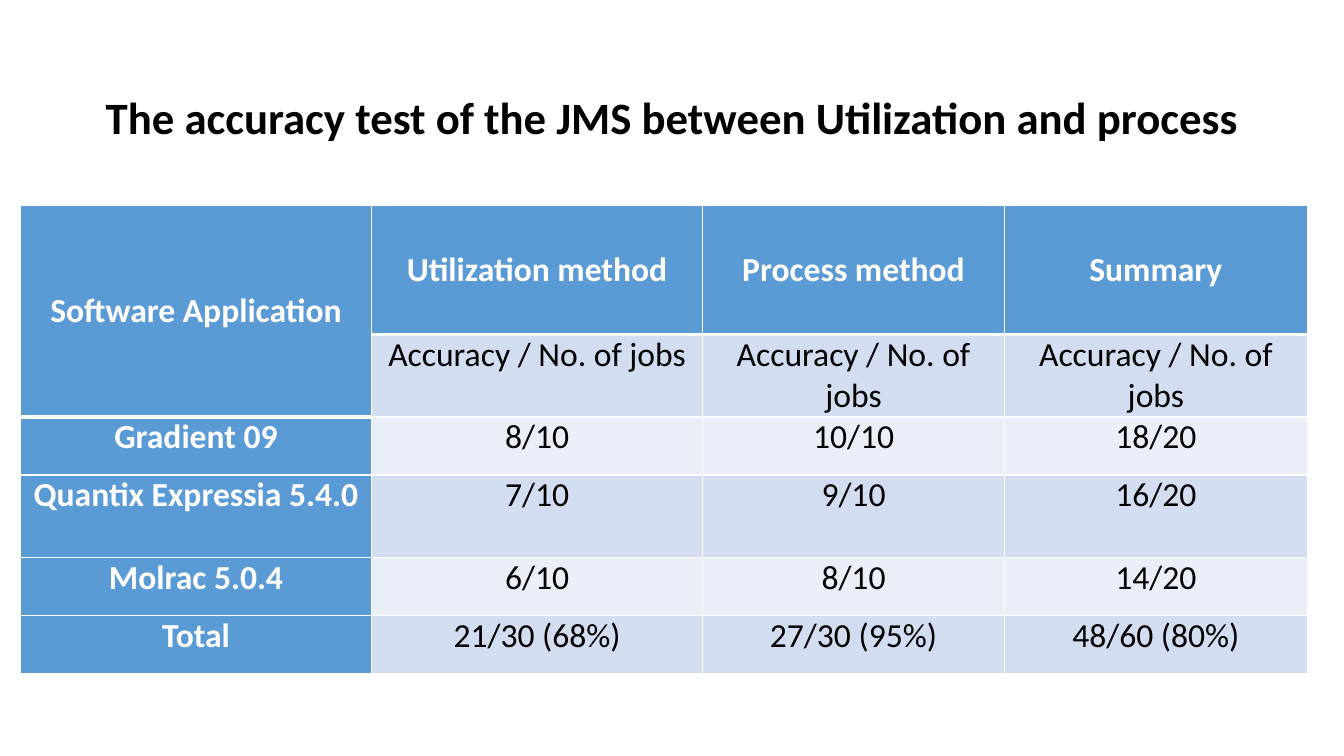
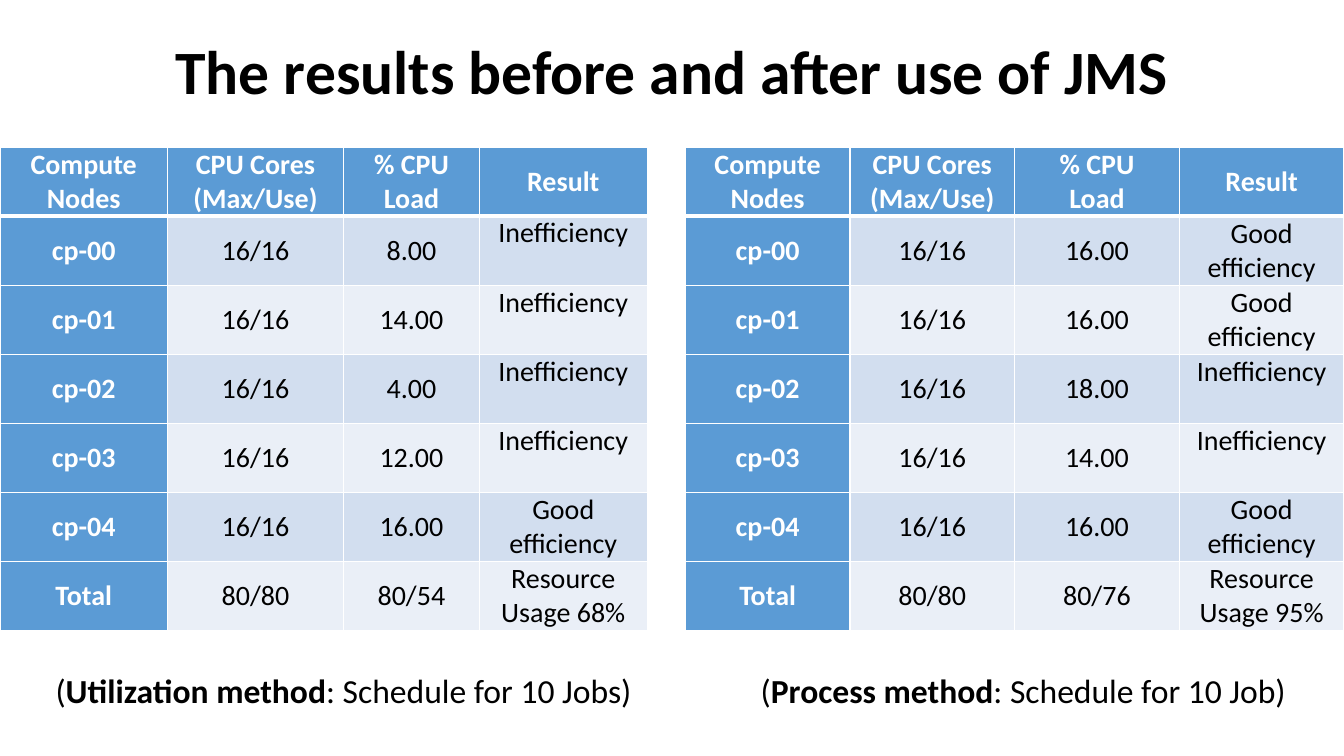
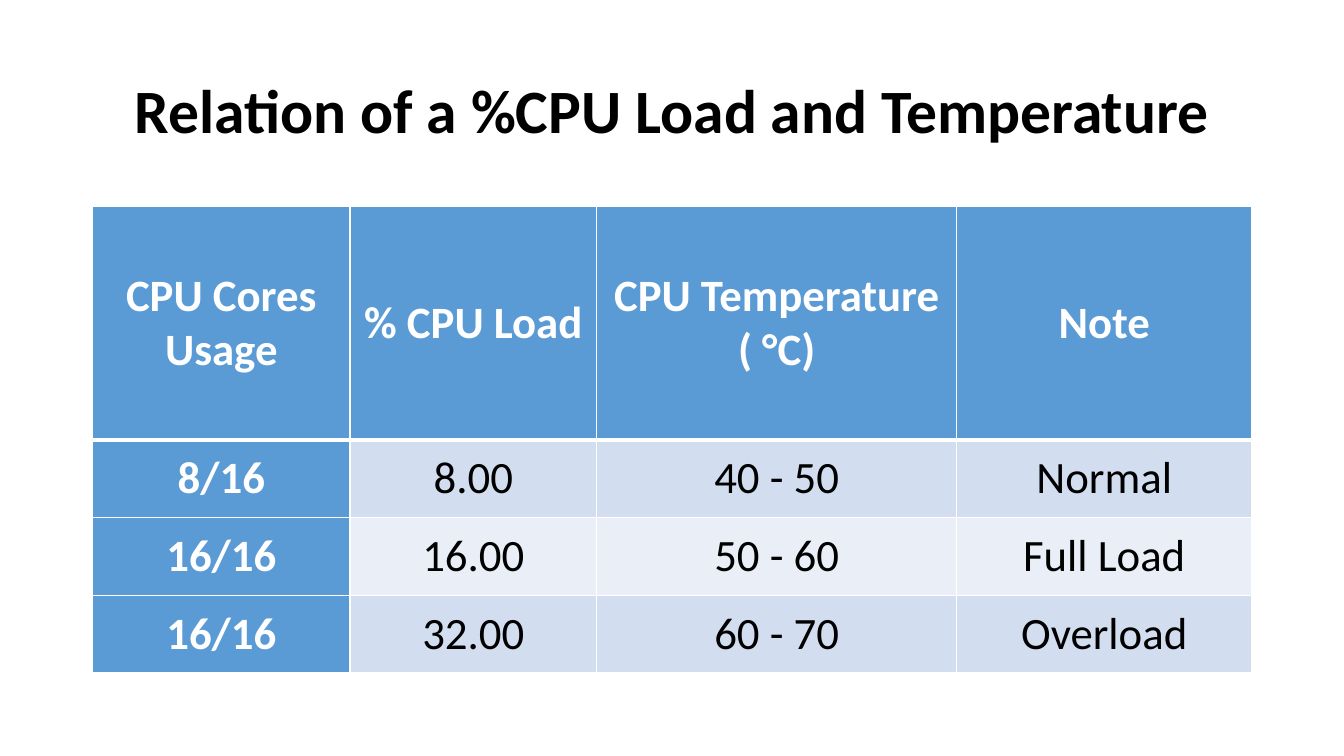
from dataclasses import dataclass

from lxml import etree
from pptx import Presentation
from pptx.dml.color import RGBColor
from pptx.enum.text import MSO_ANCHOR, PP_ALIGN
from pptx.oxml.ns import qn
from pptx.util import Cm, Pt

CENTER, LEFT = PP_ALIGN.CENTER, PP_ALIGN.LEFT
TOP, MIDDLE = MSO_ANCHOR.TOP, MSO_ANCHOR.MIDDLE


@dataclass(frozen=True)
class Theme:
    font: str = "Calibri"
    ink: str = "000000"
    paper: str = "FFFFFF"
    head: str = "5B9BD5"
    bands: tuple = ("D2DEEF", "EAEFF7")
    title: int = 44
    long_title: int = 32
    large: int = 32
    body: int = 24
    small: int = 20
    thin: int = 1
    thick: int = 3
    spacing: float = 0.9
    cell_inset: float = 0.18


T = Theme()


def add_run(p, text, size, color=T.ink, bold=False):
    r = p.add_run()
    r.text = text
    r.font.name = T.font
    r.font.size = Pt(size)
    r.font.bold = bold
    r.font.color.rgb = RGBColor.from_string(color)


def add_text(s, box, runs, size, align):
    tf = s.shapes.add_textbox(*map(Cm, box)).text_frame
    tf.word_wrap = True
    tf.vertical_anchor = MIDDLE
    p = tf.paragraphs[0]
    p.alignment = align
    p.line_spacing = T.spacing
    for text, bold in runs:
        add_run(p, text, size, bold=bold)


def add_title(s, y, text, size=T.title):
    add_text(s, (2.34, y, 29.21, 3.68), [(text, True)], size, CENTER)


def set_borders(cell, top, bottom):
    tc_pr = cell._tc.get_or_add_tcPr()
    for side, width in (("L", T.thin), ("R", T.thin), ("T", top), ("B", bottom)):
        ln = etree.SubElement(tc_pr, qn(f"a:ln{side}"), w=str(Pt(width)))
        fill = etree.SubElement(ln, qn("a:solidFill"))
        etree.SubElement(fill, qn("a:srgbClr"), val=T.paper)


def fill_cell(cell, text, size, fill, heading, anchor):
    cell.fill.solid()
    cell.fill.fore_color.rgb = RGBColor.from_string(fill)
    cell.vertical_anchor = anchor
    cell.margin_left = cell.margin_right = Cm(T.cell_inset)
    cell.margin_top = cell.margin_bottom = 0
    tf = cell.text_frame
    for i, line in enumerate(text.split("\n")):
        p = tf.add_paragraph() if i else tf.paragraphs[0]
        p.alignment = CENTER
        add_run(p, line, size, T.paper if heading else T.ink, heading)


def add_grid(s, x, y, widths, heights, rows, size, anchor_of):
    box = (x, y, sum(widths), sum(heights))
    table = s.shapes.add_table(len(rows), len(widths), *map(Cm, box)).table
    for col, width in zip(table.columns, widths):
        col.width = Cm(width)
    for row, height in zip(table.rows, heights):
        row.height = Cm(height)
    for i, row in enumerate(rows):
        for j, text in enumerate(row):
            cell = table.cell(i, j)
            depth = 2 if rows[1][j] is None else 1
            set_borders(cell,
                        T.thick if i == depth else T.thin,
                        T.thick if i == depth - 1 else T.thin)
            if text is None:
                table.cell(i - 1, j).merge(cell)
                continue
            heading = i == 0 or j == 0
            fill = T.head if heading else T.bands[(i - 1) % 2]
            fill_cell(cell, text, size, fill, heading, anchor_of(i, text))


def accuracy_slide(s):
    add_title(s, 1.19, "The accuracy test of the JMS between Utilization and process",
              T.long_title)
    rows = [
        ("Software Application", "Utilization method", "Process method", "Summary"),
        (None,) + ("Accuracy / No. of jobs",) * 3,
        ("Gradient 09", "8/10", "10/10", "18/20"),
        ("Quantix Expressia 5.4.0", "7/10", "9/10", "16/20"),
        ("Molrac 5.0.4", "6/10", "8/10", "14/20"),
        ("Total", "21/30 (68%)", "27/30 (95%)", "48/60 (80%)"),
    ]
    one_line, two_lines = 1.46, 2.08
    heights = (3.25, two_lines, one_line, two_lines, one_line, one_line)
    add_grid(s, 0.51, 5.18, (8.86, 8.33, 7.62, 7.62), heights, rows, T.body,
             lambda i, text: TOP if i else MIDDLE)


def method_panel(s, x, y, widths, load_label, loads, results, total, usage,
                 caption_indent, method, schedule):
    rows = [("Compute Nodes", "CPU Cores (Max/Use)", load_label, "Result")]
    rows += [(f"cp-{n:02d}", "16/16", load, result)
             for n, (load, result) in enumerate(zip(loads, results))]
    rows.append(("Total", "80/80", total, f"Resource Usage {usage}"))
    add_grid(s, x, y, widths, [1.74] * len(rows), rows, T.small,
             lambda i, text: TOP if text == "Inefficiency" else MIDDLE)
    caption = [("(", False), (method, True), (f": {schedule})", False)]
    box = (x + caption_indent, y + 12.14, sum(widths) - caption_indent, 3.2)
    add_text(s, box, caption, T.body, LEFT)


def results_slide(s):
    add_title(s, 0.03, "The results before and after use of JMS")
    bad, good = "Inefficiency", "Good efficiency"
    method_panel(s, 0, 3.71, (4.22, 4.44, 3.42, 4.23), "% CPU Load",
                 ("8.00", "14.00", "4.00", "12.00", "16.00"),
                 (bad, bad, bad, bad, good), "80/54", "68%",
                 1.15, "Utilization method", "Schedule for 10 Jobs")
    method_panel(s, 17.27, 3.71, (4.15,) * 4, "% CPU\nLoad",
                 ("16.00", "16.00", "18.00", "14.00", "16.00"),
                 (good, good, bad, bad, good), "80/76", "95%",
                 1.65, "Process method", "Schedule for 10 Job")


def temperature_slide(s):
    add_title(s, 1.02, "Relation of a %CPU Load and Temperature")
    rows = [
        ("CPU Cores Usage", "% CPU Load", "CPU Temperature ( °C)", "Note"),
        ("8/16", "8.00", "40 - 50", "Normal"),
        ("16/16", "16.00", "50 - 60", "Full Load"),
        ("16/16", "32.00", "60 - 70", "Overload"),
    ]
    add_grid(s, 2.34, 5.21, (6.48, 6.22, 9.07, 7.44), (5.87, 1.96, 1.96, 1.96),
             rows, T.large, lambda i, text: MIDDLE)


def main():
    prs = Presentation()
    prs.slide_width, prs.slide_height = Cm(33.87), Cm(19.05)
    for build in (accuracy_slide, results_slide, temperature_slide):
        build(prs.slides.add_slide(prs.slide_layouts[6]))
    prs.save("out.pptx")


if __name__ == "__main__":
    main()
